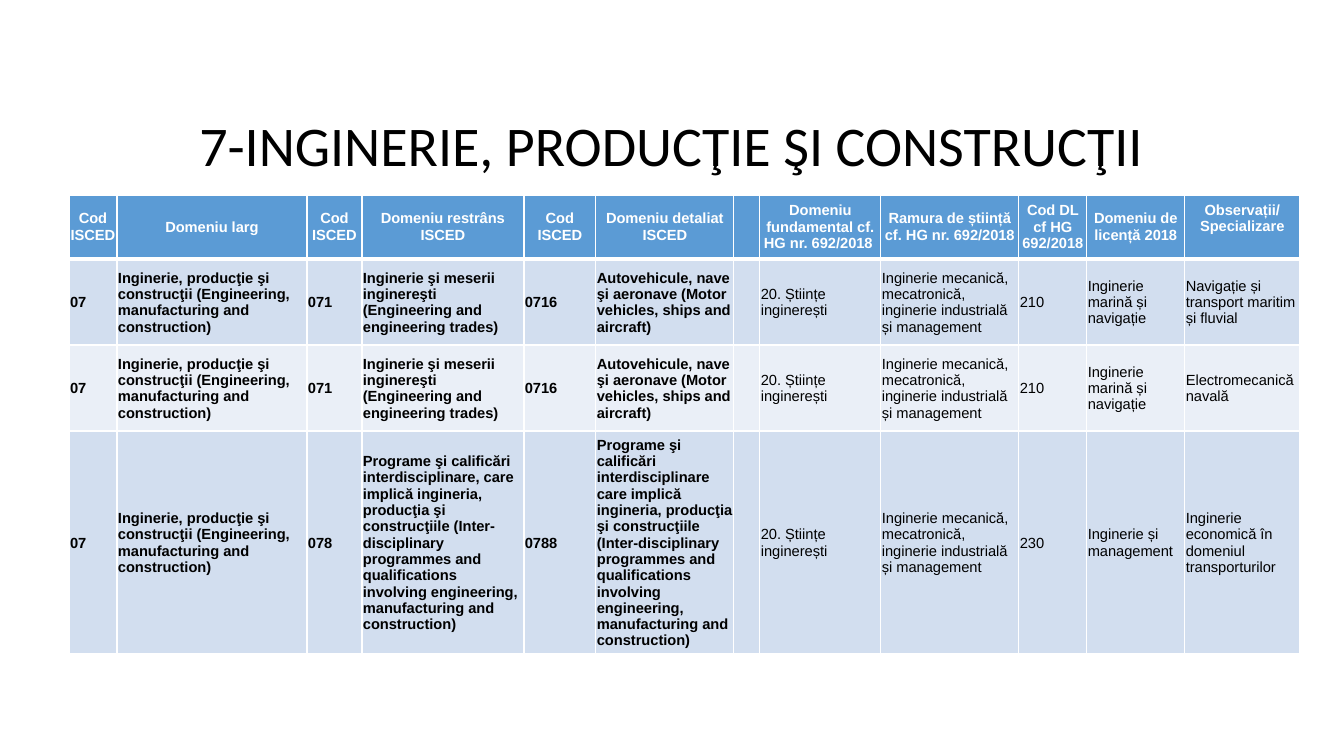
from dataclasses import dataclass

from lxml import etree
from pptx import Presentation
from pptx.dml.color import RGBColor
from pptx.enum.text import MSO_ANCHOR, MSO_AUTO_SIZE, PP_ALIGN
from pptx.oxml.ns import qn
from pptx.util import Pt

LEFT, CENTER = PP_ALIGN.LEFT, PP_ALIGN.CENTER
MIDDLE = MSO_ANCHOR.MIDDLE
NO_AUTOFIT = MSO_AUTO_SIZE.NONE
SLIDE_W, SLIDE_H = 1344, 756
EMU_PER_PX = 12192000 / SLIDE_W
TITLE_ONLY = 5


@dataclass(frozen=True)
class Theme:
    """Colours, fonts and type sizes of the slide."""
    ink: str = "000000"
    white: str = "FFFFFF"
    header: str = "5B9BD5"
    bands: tuple = ("D2DEEF", "EAEFF7")
    title_font: str = "Calibri"
    table_font: str = "Arial"
    title_size: float = 40
    table_size: float = 10.5
    rule: float = 1
    header_rule: float = 3


THEME = Theme()
TITLE = "7-INGINERIE, PRODUCŢIE ŞI CONSTRUCŢII "
COL_WIDTHS = [48, 190, 55, 162, 72, 138, 26, 121, 138, 68, 98, 115]
ROW_HEIGHTS = [64, 86, 86, 223]
SPACER_COL = 6
HEADERS = [
    "Cod ISCED", "Domeniu larg", "Cod ISCED", "Domeniu restrâns ISCED",
    "Cod ISCED", "Domeniu detaliat ISCED", "",
    "Domeniu fundamental cf. HG nr. 692/2018 ",
    "Ramura de știință cf. HG nr. 692/2018", "Cod DL cf HG 692/2018",
    "Domeniu de licență 2018", "Observații/ Specializare",
]
BROAD = ["07", "Inginerie, producţie şi construcţii (Engineering, "
         "manufacturing and construction)"]
VEHICLES = ["071", "Inginerie şi meserii inginereşti (Engineering and "
            "engineering trades)",
            "0716", "Autovehicule, nave şi aeronave (Motor vehicles, ships "
            "and aircraft)"]
INVOLVING = ("care implică ingineria, producţia şi construcţiile "
             "(Inter-disciplinary programmes and qualifications involving "
             "engineering, manufacturing and construction)")
PROGRAMMES = ["078", "Programe şi calificări interdisciplinare, " + INVOLVING,
              "0788", "Programe şi calificări interdisciplinare " + INVOLVING]
BRANCH = ["", "20. Științe inginerești",
          "Inginerie mecanică, mecatronică, inginerie industrială și management"]
NAVAL = ["210", "Inginerie marină și navigație"]
ROWS = [
    BROAD + VEHICLES + BRANCH + NAVAL
    + ["Navigație și transport maritim și fluvial"],
    BROAD + VEHICLES + BRANCH + NAVAL + ["Electromecanică navală"],
    BROAD + PROGRAMMES + BRANCH
    + ["230", "Inginerie și management",
       "Inginerie economică în domeniul transporturilor"],
]


def px(n):
    """Turn pixels into EMU."""
    return round(n * EMU_PER_PX)


def write(tf, text, *, font, size, color, bold=False, align=LEFT, spacing=1.0):
    """Write one formatted paragraph into a text frame."""
    tf.word_wrap = True
    p = tf.paragraphs[0]
    p.alignment = align
    p.line_spacing = spacing
    r = p.add_run()
    r.text = text
    r.font.name = font
    r.font.size = Pt(size)
    r.font.bold = bold
    r.font.color.rgb = RGBColor.from_string(color)


def set_borders(cell, top, bottom):
    """Draw white rules of the given top and bottom widths around a cell."""
    tc_pr = cell._tc.get_or_add_tcPr()
    widths = {"L": THEME.rule, "R": THEME.rule, "T": top, "B": bottom}
    for i, (side, width) in enumerate(widths.items()):
        ln = etree.Element(qn(f"a:ln{side}"), w=str(Pt(width)))
        fill = etree.SubElement(ln, qn("a:solidFill"))
        etree.SubElement(fill, qn("a:srgbClr"), val=THEME.white)
        tc_pr.insert(i, ln)


def add_title(s, x, y, w, h):
    """Place and format the slide title in the given box."""
    sp = s.shapes.title
    sp.left, sp.top, sp.width, sp.height = px(x), px(y), px(w), px(h)
    tf = sp.text_frame
    tf.auto_size = NO_AUTOFIT
    tf.vertical_anchor = MIDDLE
    write(tf, TITLE, font=THEME.title_font, size=THEME.title_size,
          color=THEME.ink, align=CENTER, spacing=0.9)


def fill_cell(cell, text, row, col):
    """Fill and format one table cell by its row and column."""
    is_header = row == 0
    fill = THEME.header if is_header else THEME.bands[(row - 1) % 2]
    cell.fill.solid()
    cell.fill.fore_color.rgb = RGBColor.from_string(fill)
    cell.vertical_anchor = MIDDLE
    side = px(0 if is_header else 1)
    cell.margin_left = cell.margin_right = cell.margin_top = side
    raised = is_header and col == len(HEADERS) - 1
    cell.margin_bottom = px(17 if raised else 0)
    set_borders(cell, THEME.header_rule if row == 1 else THEME.rule,
                THEME.header_rule if is_header else THEME.rule)
    if text:
        write(cell.text_frame, text, font=THEME.table_font,
              size=THEME.table_size,
              color=THEME.white if is_header else THEME.ink,
              bold=is_header or col < SPACER_COL,
              align=CENTER if is_header else LEFT)


def add_domain_table(s, x, y):
    """Place the table of study domains with its top left corner at x, y."""
    data = [HEADERS] + ROWS
    table = s.shapes.add_table(len(data), len(HEADERS), px(x), px(y),
                               px(sum(COL_WIDTHS)), px(sum(ROW_HEIGHTS))).table
    for column, width in zip(table.columns, COL_WIDTHS):
        column.width = px(width)
    for i, (values, height) in enumerate(zip(data, ROW_HEIGHTS)):
        table.rows[i].height = px(height)
        for j, text in enumerate(values):
            fill_cell(table.cell(i, j), text, i, j)


def main():
    """Build the slide and save it."""
    prs = Presentation()
    prs.slide_width, prs.slide_height = px(SLIDE_W), px(SLIDE_H)
    s = prs.slides.add_slide(prs.slide_layouts[TITLE_ONLY])
    add_title(s, 98, 112, 1159, 72)
    add_domain_table(s, 69, 195)
    prs.save("out.pptx")


if __name__ == "__main__":
    main()
